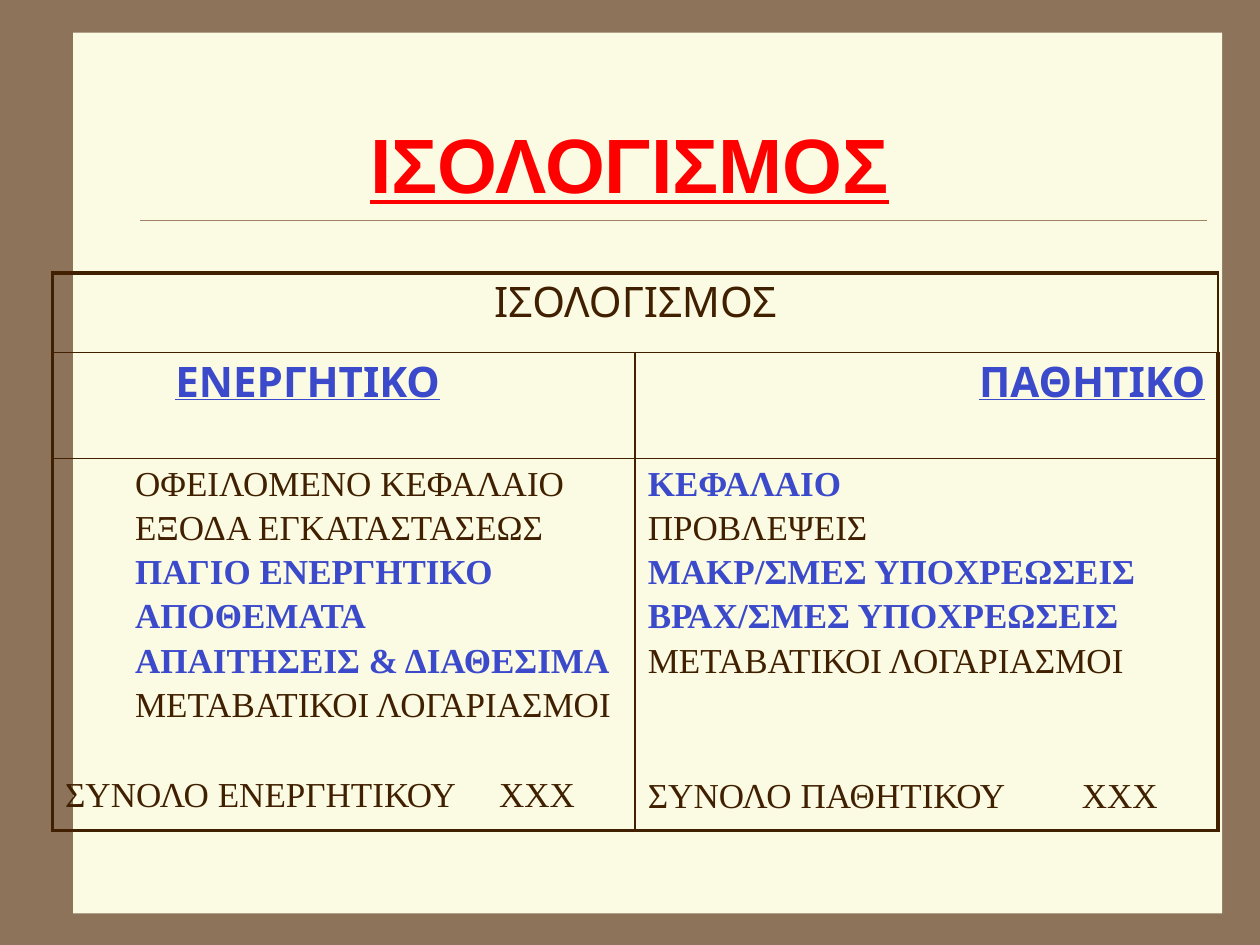
from lxml.etree import SubElement as Sub, Element
from pptx import Presentation
from pptx.dml.color import RGBColor
from pptx.enum.shapes import MSO_CONNECTOR as Conn, MSO_SHAPE as Shape
from pptx.enum.text import MSO_ANCHOR as Anchor, PP_ALIGN as Align
from pptx.oxml.ns import qn
from pptx.util import Pt

BROWN, BLUE, RED = "402000", "3B49CB", "FF0000"
SERIF, SANS = "Times New Roman", "Karla"
LINE, GAP = 23, 3.1
TAB = 248

ASSETS = [
    ("ΟΦΕΙΛΟΜΕΝΟ ΚΕΦΑΛΑΙΟ", False),
    ("ΕΞΟΔΑ ΕΓΚΑΤΑΣΤΑΣΕΩΣ", False),
    ("ΠΑΓΙΟ ΕΝΕΡΓΗΤΙΚΟ", True),
    ("ΑΠΟΘΕΜΑΤΑ", True),
    ("ΑΠΑΙΤΗΣΕΙΣ & ΔΙΑΘΕΣΙΜΑ", True),
    ("ΜΕΤΑΒΑΤΙΚΟΙ ΛΟΓΑΡΙΑΣΜΟΙ", False),
]
DEBTS = [
    ("ΚΕΦΑΛΑΙΟ", True),
    ("ΠΡΟΒΛΕΨΕΙΣ", False),
    ("ΜΑΚΡ/ΣΜΕΣ ΥΠΟΧΡΕΩΣΕΙΣ", True),
    ("ΒΡΑΧ/ΣΜΕΣ ΥΠΟΧΡΕΩΣΕΙΣ", True),
    ("ΜΕΤΑΒΑΤΙΚΟΙ ΛΟΓΑΡΙΑΣΜΟΙ", False),
]


def paint(item, color):
    item.solid()
    item.fore_color.rgb = RGBColor.from_string(color)


def write(para, text, size, face, color, bold=False, under=False):
    para.text = text
    for run in para.runs:
        font = run.font
        font.size, font.name = Pt(size), face
        font.bold, font.underline = bold, under
        paint(font.fill, color)


def add_page(slide):
    paint(slide.background.fill, "8C735A")
    page = slide.shapes.add_shape(Shape.RECTANGLE, Pt(41.8), Pt(18.7), Pt(656.6), Pt(503.3))
    page.shadow.inherit = False
    paint(page.fill, "FBFAE2")
    page.line.fill.background()
    rule = slide.shapes.add_connector(Conn.STRAIGHT, Pt(80), Pt(126), Pt(690), Pt(126))
    paint(rule.line.fill, "A08366")
    rule.line.width = Pt(0.25)
    Sub(rule.element.spPr, qn("a:effectLst"))


def add_title(slide, text):
    title = slide.shapes.title
    title.left, title.top, title.width, title.height = Pt(54), Pt(48), Pt(612), Pt(90)
    frame = title.text_frame
    frame.word_wrap = True
    frame.vertical_anchor = Anchor.MIDDLE
    para = frame.paragraphs[0]
    para.alignment = Align.CENTER
    write(para, text, 44, "Arial", RED, True, True)
    title.element.getparent().append(title.element)


def add_edge(cell, index, side, width):
    edge = Element(qn(f"a:ln{side}"), w=str(Pt(width)))
    fill = Sub(edge, qn("a:solidFill"))
    Sub(fill, qn("a:srgbClr"), val=BROWN)
    cell._tc.get_or_add_tcPr().insert(index, edge)


def frame_cells(table):
    rows, cols = len(table.rows), len(table.columns)
    for r in range(rows):
        for c in range(cols):
            cell = table.cell(r, c)
            cell.fill.background()
            outer = {"L": c == 0, "R": c == cols - 1, "T": r == 0, "B": r == rows - 1}
            for i, (side, edge) in enumerate(outer.items()):
                add_edge(cell, i, side, 2.25 if edge else 1)


def add_head(cell, text, align, strong, indent=0):
    para = cell.text_frame.paragraphs[0]
    para.alignment = align
    para._p.get_or_add_pPr().set("marL", str(Pt(indent)))
    write(para, text, 24, SANS, BLUE if strong else BROWN, strong, strong)


def add_list(cell, items, total, indent):
    frame = cell.text_frame
    for i, (text, strong) in enumerate(items):
        para = frame.add_paragraph() if i else frame.paragraphs[0]
        para._p.get_or_add_pPr().set("marL", str(Pt(indent)))
        if i:
            para.space_before = Pt(GAP)
        write(para, text, 20, SERIF, BLUE if strong else BROWN, strong)
    blank = 7 - len(items)
    para = frame.add_paragraph()
    para.space_before = Pt(round(blank * (LINE + GAP) + GAP, 2))
    tabs = Sub(para._p.get_or_add_pPr(), qn("a:tabLst"))
    Sub(tabs, qn("a:tab"), pos=str(Pt(TAB)), algn="l")
    write(para, f"{total}\tΧΧΧ", 20, SERIF, BROWN)


def add_sheet(slide):
    highs = [45.5, 60.5, 212.5]
    table = slide.shapes.add_table(3, 2, Pt(30), Pt(156), Pt(666), Pt(sum(highs))).table
    table.first_row = table.horz_banding = False
    for row, high in zip(table.rows, highs):
        row.height = Pt(high)
    frame_cells(table)
    table.cell(0, 0).merge(table.cell(0, 1))
    add_head(table.cell(0, 0), "ΙΣΟΛΟΓΙΣΜΟΣ", Align.CENTER, False)
    add_head(table.cell(1, 0), "ΕΝΕΡΓΗΤΙΚΟ", Align.LEFT, True, 63)
    add_head(table.cell(1, 1), "ΠΑΘΗΤΙΚΟ", Align.RIGHT, True)
    add_list(table.cell(2, 0), ASSETS, "ΣΥΝΟΛΟ ΕΝΕΡΓΗΤΙΚΟΥ", 40)
    add_list(table.cell(2, 1), DEBTS, "ΣΥΝΟΛΟ ΠΑΘΗΤΙΚΟΥ", 0)


def main():
    deck = Presentation()
    deck.slide_width, deck.slide_height = Pt(720), Pt(540)
    slide = deck.slides.add_slide(deck.slide_layouts[5])
    add_page(slide)
    add_title(slide, "ΙΣΟΛΟΓΙΣΜΟΣ")
    add_sheet(slide)
    deck.save("out.pptx")


if __name__ == "__main__":
    main()
